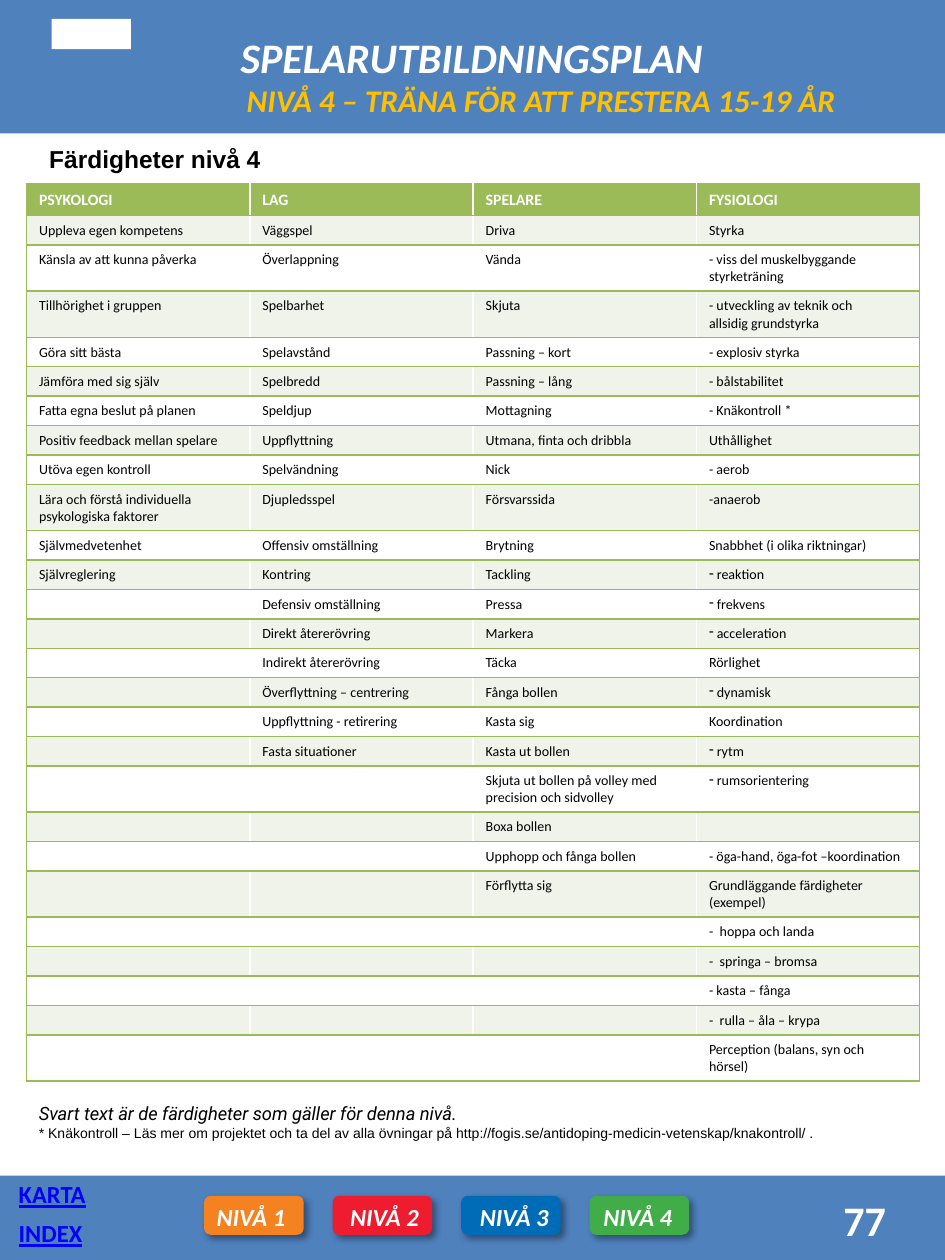
from lxml import etree
from pptx import Presentation
from pptx.dml.color import RGBColor
from pptx.enum.shapes import MSO_SHAPE
from pptx.enum.text import MSO_ANCHOR, MSO_AUTO_SIZE, PP_ALIGN
from pptx.oxml.ns import qn
from pptx.util import Inches, Pt

RECTANGLE, ROUNDED = MSO_SHAPE.RECTANGLE, MSO_SHAPE.ROUNDED_RECTANGLE
LEFT, RIGHT = PP_ALIGN.LEFT, PP_ALIGN.RIGHT
TOP = MSO_ANCHOR.TOP
FIT_SHAPE, NO_FIT = MSO_AUTO_SIZE.SHAPE_TO_FIT_TEXT, MSO_AUTO_SIZE.NONE

BLUE, GREEN, PALE, WHITE, BLACK = "4F81BD", "9BBB59", "EFF3EA", "FFFFFF", "000000"
LINK, GOLD = "0000FF", "FFC000"

HEADER = ["PSYKOLOGI", "LAG", "SPELARE", "FYSIOLOGI"]
# A leading ">" marks a paragraph with a dash bullet.
SKILLS = [
    ["Uppleva egen kompetens", "Väggspel", "Driva", "Styrka"],
    ["Känsla av att kunna påverka", "Överlappning", "Vända",
     "- viss del muskelbyggande\nstyrketräning"],
    ["Tillhörighet i gruppen", "Spelbarhet", "Skjuta",
     "- utveckling av teknik och\nallsidig grundstyrka"],
    ["Göra sitt bästa", "Spelavstånd", "Passning – kort", "- explosiv styrka"],
    ["Jämföra med sig själv", "Spelbredd", "Passning – lång", "- bålstabilitet"],
    ["Fatta egna beslut på planen", "Speldjup", "Mottagning", "- Knäkontroll *"],
    ["Positiv feedback mellan spelare", "Uppflyttning",
     "Utmana, finta och dribbla", "Uthållighet"],
    ["Utöva egen kontroll", "Spelvändning", "Nick", "- aerob"],
    ["Lära och förstå individuella\npsykologiska faktorer", "Djupledsspel",
     "Försvarssida", "-anaerob"],
    ["Självmedvetenhet", "Offensiv omställning", "Brytning",
     "Snabbhet (i olika riktningar)"],
    ["Självreglering", "Kontring", "Tackling", "> reaktion"],
    ["", "Defensiv omställning", "Pressa", "> frekvens"],
    ["", "Direkt återerövring", "Markera", "> acceleration"],
    ["", "Indirekt återerövring", "Täcka", "Rörlighet"],
    ["", "Överflyttning – centrering", "Fånga bollen", "> dynamisk"],
    ["", "Uppflyttning - retirering", "Kasta sig", "Koordination"],
    ["", "Fasta situationer", "Kasta ut bollen", "> rytm"],
    ["", "", "Skjuta ut bollen på volley med\nprecision och sidvolley",
     "> rumsorientering"],
    ["", "", "Boxa bollen", ""],
    ["", "", "Upphopp och fånga bollen", "- öga-hand, öga-fot –koordination"],
    ["", "", "Förflytta sig", "Grundläggande färdigheter (exempel)"],
    ["", "", "", "-  hoppa och landa"],
    ["", "", "", "-  springa – bromsa"],
    ["", "", "", "- kasta – fånga"],
    ["", "", "", "-  rulla – åla – krypa"],
    ["", "", "", "Perception (balans, syn och hörsel)"],
]
# label, button colour, label left, label width
LEVELS = [
    ("NIVÅ 1", "F58220", 1.62, 0.75),
    ("NIVÅ 2", "ED1C2E", 2.68, 0.75),
    ("NIVÅ 3", "006BB6", 3.71, 0.75),
    ("NIVÅ 4", "41AD49", 4.69, 0.79),
]
LINKS = [("KARTA", 9.31, 0.74), ("INDEX", 9.62, 0.71)]
NOTES = [
    ("Svart text är de färdigheter som gäller för denna nivå.", "Roboto", 10.5, True),
    ("* Knäkontroll – Läs mer om projektet och ta del av alla övningar på "
     "http://fogis.se/antidoping-medicin-vetenskap/knakontroll/ .", "Arial", 8, False),
]


def rgb(color):
    return RGBColor.from_string(color)


def style(para, size, color, font="Calibri", bold=False, italic=False, underline=None):
    for span in para.runs:
        span.font.name, span.font.size = font, Pt(size)
        span.font.bold, span.font.italic = bold, italic
        span.font.underline = underline
        span.font.color.rgb = rgb(color)


def add_block(kind, left, top, width, height, color):
    block = page.shapes.add_shape(
        kind, Inches(left), Inches(top), Inches(width), Inches(height))
    block.shadow.inherit = False
    block.fill.solid()
    block.fill.fore_color.rgb = rgb(color)
    block.line.fill.background()
    return block


def add_shadow(block):
    effects = block.element.spPr.find(qn("a:effectLst"))
    shadow = etree.SubElement(effects, qn("a:outerShdw"), blurRad=str(Pt(4)),
                              dist=str(Pt(3)), dir="2700000", rotWithShape="0")
    color = etree.SubElement(shadow, qn("a:srgbClr"), val=BLACK)
    etree.SubElement(color, qn("a:alpha"), val="40000")


def add_text(text, left, top, width, height, wrap=True):
    box = page.shapes.add_textbox(
        Inches(left), Inches(top), Inches(width), Inches(height))
    box.text_frame.word_wrap = wrap
    box.text_frame.auto_size = NO_FIT if wrap else FIT_SHAPE
    box.text_frame.text = text
    return box.text_frame


def add_border(cell, sides):
    properties = cell._tc.get_or_add_tcPr()
    for side in sides:
        line = etree.SubElement(properties, qn("a:ln" + side), w=str(Pt(1)))
        fill = etree.SubElement(line, qn("a:solidFill"))
        etree.SubElement(fill, qn("a:srgbClr"), val=GREEN)


def fill_cell(cell, text, size, color, bold):
    bulleted = text.startswith(">")
    cell.text_frame.text = text.removeprefix(">")
    for para in cell.text_frame.paragraphs:
        if bulleted:
            etree.SubElement(para._p.get_or_add_pPr(), qn("a:buChar"), char="-")
        style(para, size, color, bold=bold)
        if not text:  # keeps empty rows as low as the others
            etree.SubElement(para._p, qn("a:endParaRPr"), sz=str(size * 100))


deck = Presentation()
deck.slide_width, deck.slide_height = Inches(7.5), Inches(10)
page = deck.slides.add_slide(deck.slide_layouts[5])

# Bands and headings
add_block(RECTANGLE, 0, 9.33, 7.5, 0.67, BLUE)
banner = add_block(RECTANGLE, 0, 0, 7.5, 1.06, BLUE)
title = page.shapes.title
title.left, title.top = Inches(1.81), Inches(0.2)
title.width, title.height = Inches(3.91), Inches(0.5)
frame = title.text_frame
frame.text = "SPELARUTBILDNINGSPLAN"
frame.word_wrap, frame.auto_size, frame.vertical_anchor = False, FIT_SHAPE, TOP
frame.paragraphs[0].alignment = LEFT
style(frame.paragraphs[0], 24, WHITE, bold=True, italic=True)
banner.element.addnext(title.element)
add_block(RECTANGLE, 0.41, 0.15, 0.63, 0.24, WHITE)

frame = add_text("NIVÅ 4 – TRÄNA FÖR ATT PRESTERA 15-19 ÅR", 1.86, 0.59, 4.88, 0.47)
style(frame.paragraphs[0], 18, GOLD, bold=True, italic=True)

frame = add_text("Färdigheter nivå 4", 0.39, 1.14, 1.69, 0.24)
frame.margin_left = frame.margin_right = frame.margin_top = frame.margin_bottom = 0
style(frame.paragraphs[0], 14, BLACK, font="Arial", bold=True)

# Footer
frame = add_text("77", 6.43, 9.43, 0.7, 0.53)
frame.paragraphs[0].alignment = RIGHT
style(frame.paragraphs[0], 24, WHITE, bold=True)
for label, top, width in LINKS:
    frame = add_text(label, 0.05, top, width, 0.34, wrap=False)
    style(frame.paragraphs[0], 14, LINK, bold=True, underline=True)
for index, (label, color, left, width) in enumerate(LEVELS):
    add_shadow(add_block(ROUNDED, 1.62 + index * 1.02, 9.49, 0.79, 0.31, color))
    frame = add_text(label, left, 9.49, width, 0.34, wrap=False)
    style(frame.paragraphs[0], 14, WHITE, bold=True, italic=True)

# Skills table
rows = [HEADER] + SKILLS
table = page.shapes.add_table(len(rows), len(HEADER), Inches(0.21), Inches(1.46),
                              Inches(7.09), Inches(5.45)).table
for column in table.columns:
    column.width = Inches(7.09 / len(HEADER))
for y, texts in enumerate(rows):
    is_header = y == 0
    table.rows[y].height = Inches(0.25 if is_header else 0.2)
    for x, text in enumerate(texts):
        cell = table.cell(y, x)
        sides = ["L"] * (x == 0) + ["R"] * (x == len(HEADER) - 1) + ["T", "B"]
        add_border(cell, sides)
        cell.fill.solid()
        cell.fill.fore_color.rgb = rgb(GREEN if is_header else PALE if y % 2 else WHITE)
        fill_cell(cell, text, 9 if is_header else 8,
                  WHITE if is_header else BLACK, is_header)

# Notes below the table
frame = add_text("\n".join(note[0] for note in NOTES), 0.21, 8.7, 6.44, 0.42, wrap=False)
for para, (_, font, size, italic) in zip(frame.paragraphs, NOTES):
    style(para, size, BLACK, font=font, italic=italic)

deck.save("out.pptx")
